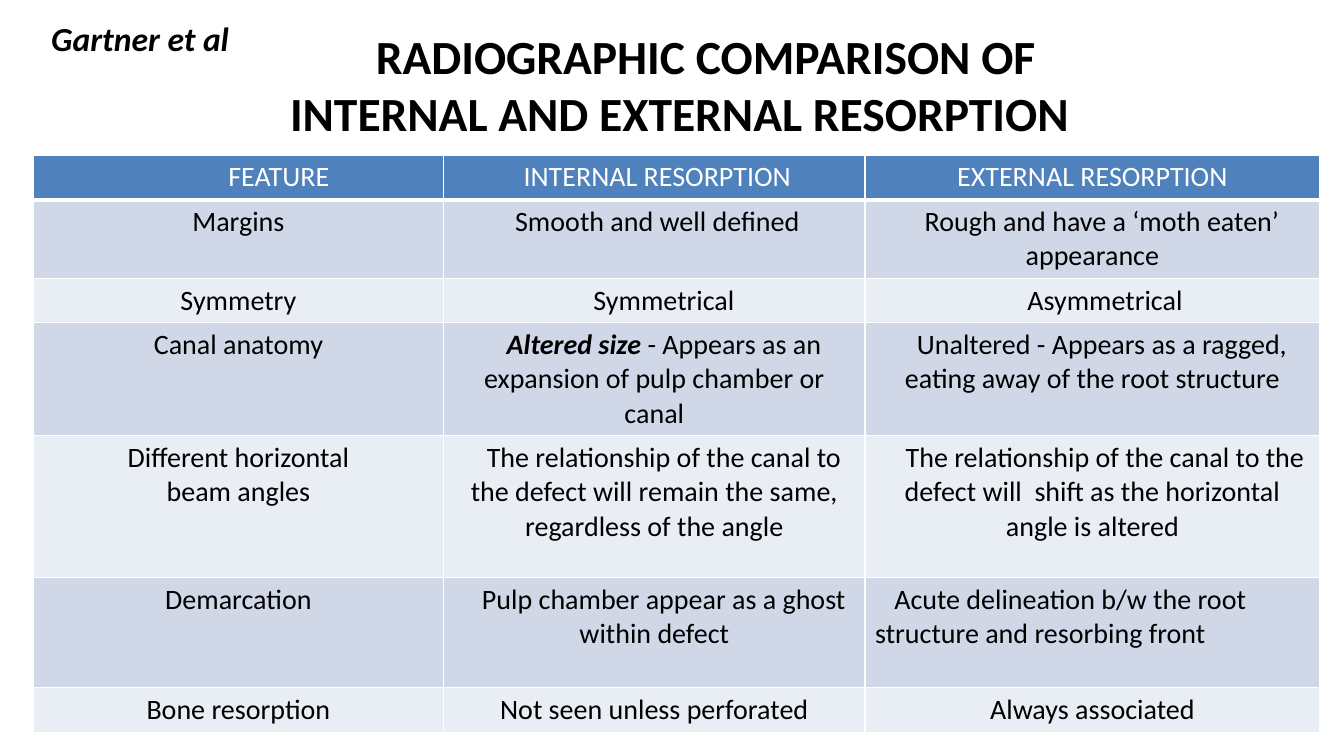
from dataclasses import dataclass

from lxml import etree
from pptx import Presentation
from pptx.dml.color import RGBColor
from pptx.enum import text as t
from pptx.oxml import ns
from pptx.util import Inches, Pt

BLACK = RGBColor(0x00, 0x00, 0x00)
WHITE = RGBColor(0xFF, 0xFF, 0xFF)
HEADER_BLUE = RGBColor(0x4F, 0x81, 0xBD)
BAND_DARK = RGBColor(0xD0, 0xD8, 0xE8)
BAND_LIGHT = RGBColor(0xE9, 0xED, 0xF4)
CENTER = t.PP_ALIGN.CENTER
LEFT = t.PP_ALIGN.LEFT


@dataclass(frozen=True)
class Entry:
    text: str
    indent: float = 0
    lead: str = ""
    align: t.PP_ALIGN = CENTER


COLUMN_WIDTHS = (4.07, 4.18, 4.51)
ROW_HEIGHTS = (0.44, 0.76, 0.44, 1.09, 1.41, 1.09, 0.44)
COMPARISON = (
    (Entry("FEATURE", 0.8), Entry("INTERNAL RESORPTION", 0.06),
     Entry("EXTERNAL RESORPTION")),
    (Entry("Margins"), Entry("Smooth and well defined", 0.06),
     Entry("Rough and have a ‘moth eaten’ appearance", 0.19)),
    (Entry("Symmetry"), Entry("Symmetrical", 0.19),
     Entry("Asymmetrical", 0.25)),
    (Entry("Canal anatomy"),
     Entry("- Appears as an expansion of pulp chamber or canal", 0.19,
           "Altered size "),
     Entry("Unaltered - Appears as a ragged, eating away of the root "
           "structure", 0.19)),
    (Entry("Different horizontal\nbeam angles"),
     Entry("The relationship of the canal to the defect will remain the "
           "same, regardless of the angle", 0.19),
     Entry("The relationship of the canal to the defect will  shift as the "
           "horizontal angle is altered", 0.25)),
    (Entry("Demarcation"),
     Entry("Pulp chamber appear as a ghost within defect", 0.19),
     Entry("Acute delineation b/w the root structure and resorbing front",
           0.19, align=LEFT)),
    (Entry("Bone resorption"), Entry("Not seen unless perforated"),
     Entry("Always associated")),
)


def add_run(paragraph, words: str, size: float, color: RGBColor,
            bold: bool = False, italic: bool = False) -> None:
    for number, line in enumerate(words.split("\n")):
        if number:
            paragraph.add_line_break()
        run = paragraph.add_run()
        run.text = line
        run.font.name = "Calibri"
        run.font.size = Pt(size)
        run.font.bold = bold
        run.font.italic = italic
        run.font.color.rgb = color


def indent_first_line(paragraph, indent: float) -> None:
    properties = paragraph._p.get_or_add_pPr()
    properties.set("marL", "0")
    properties.set("indent", str(int(Inches(indent))))


def add_borders(cell, bottom: float) -> None:
    properties = cell._tc.get_or_add_tcPr()
    for side, width in (("L", 1), ("R", 1), ("T", 1), ("B", bottom)):
        border = etree.SubElement(properties, ns.qn(f"a:ln{side}"),
                                  w=str(int(Pt(width))))
        fill = etree.SubElement(border, ns.qn("a:solidFill"))
        etree.SubElement(fill, ns.qn("a:srgbClr"), val=str(WHITE))


def fill_cell(cell, entry: Entry, row: int) -> None:
    header = row == 0
    add_borders(cell, 3 if header else 1)
    cell.fill.solid()
    cell.fill.fore_color.rgb = (
        HEADER_BLUE if header else BAND_DARK if row % 2 else BAND_LIGHT)
    paragraph = cell.text_frame.paragraphs[0]
    paragraph.alignment = entry.align
    indent_first_line(paragraph, entry.indent)
    color = WHITE if header else BLACK
    if entry.lead:
        add_run(paragraph, entry.lead, 20, color, bold=True, italic=True)
    add_run(paragraph, entry.text, 20, color)


def add_title(slide) -> None:
    title = slide.shapes.title
    title.left, title.top = Inches(1.95), Inches(0.33)
    title.width, title.height = Inches(9.58), Inches(1)
    title.text_frame.vertical_anchor = t.MSO_ANCHOR.MIDDLE
    title.text_frame.auto_size = t.MSO_AUTO_SIZE.NONE
    heading = title.text_frame.paragraphs[0]
    heading.alignment = CENTER
    indent_first_line(heading, 0.52)
    add_run(heading, "RADIOGRAPHIC COMPARISON OF\n"
            "INTERNAL AND EXTERNAL RESORPTION", 34, BLACK, bold=True)


def add_comparison(slide) -> None:
    table = slide.shapes.add_table(
        len(ROW_HEIGHTS), len(COLUMN_WIDTHS), Inches(0.33), Inches(1.54),
        Inches(sum(COLUMN_WIDTHS)), Inches(sum(ROW_HEIGHTS))).table
    for column, width in zip(table.columns, COLUMN_WIDTHS):
        column.width = Inches(width)
    for row, (height, entries) in enumerate(zip(ROW_HEIGHTS, COMPARISON)):
        table.rows[row].height = Inches(height)
        for column, entry in enumerate(entries):
            fill_cell(table.cell(row, column), entry, row)


def add_citation(slide) -> None:
    citation = slide.shapes.add_textbox(
        Inches(0.33), Inches(0.13), Inches(2.08), Inches(0.5))
    citation.text_frame.word_wrap = True
    citation.text_frame.auto_size = t.MSO_AUTO_SIZE.SHAPE_TO_FIT_TEXT
    author = citation.text_frame.paragraphs[0]
    author.space_after = Pt(6)
    indent_first_line(author, 0.08)
    add_run(author, "Gartner et al", 24, BLACK, bold=True, italic=True)


def main() -> None:
    deck = Presentation()
    deck.slide_width, deck.slide_height = Inches(13.33), Inches(7.5)
    slide = deck.slides.add_slide(deck.slide_layouts.get_by_name("Title Only"))
    slide.background.fill.solid()
    slide.background.fill.fore_color.rgb = WHITE
    add_title(slide)
    add_comparison(slide)
    add_citation(slide)
    deck.save("out.pptx")


if __name__ == "__main__":
    main()
